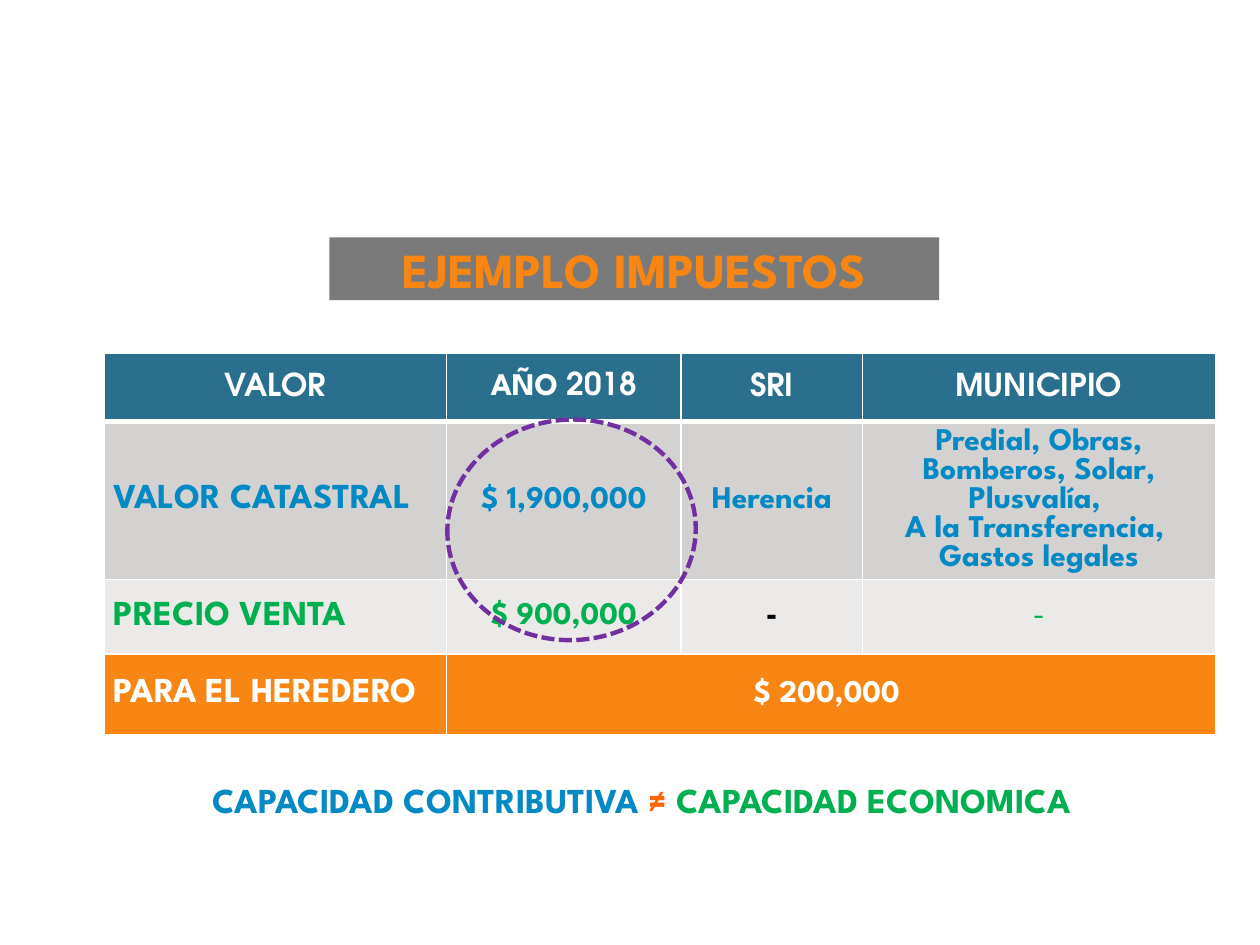
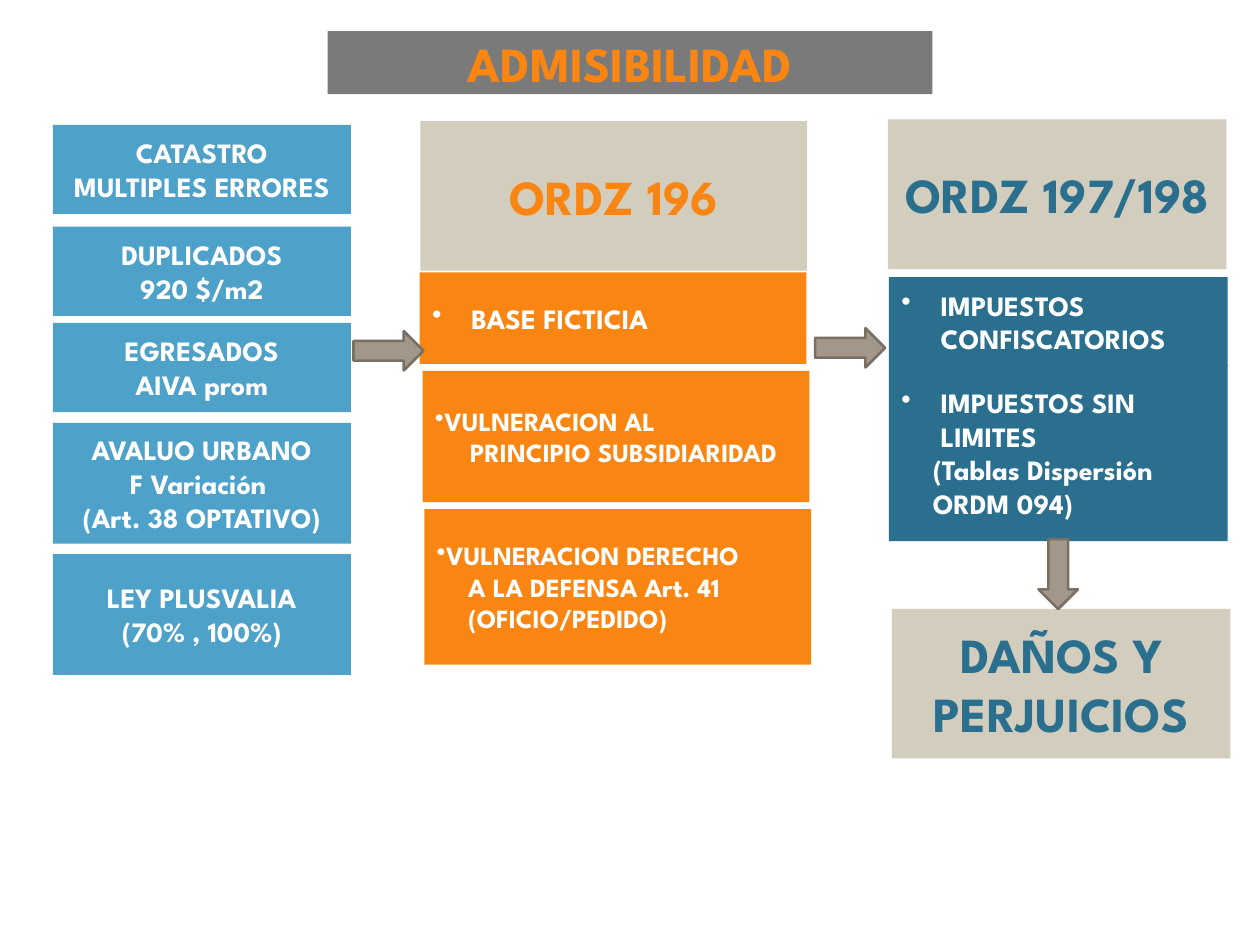
from pptx import Presentation
from pptx import util as u
from pptx.dml.color import RGBColor
from pptx.enum import dml, shapes, text
from pptx.oxml.ns import qn
from lxml import etree

Pt = u.Pt
WHITE = RGBColor(0xFF, 0xFF, 0xFF)
BLACK = RGBColor(0, 0, 0)
ORANGE = RGBColor(0xF9, 0x86, 0x13)
TEAL = RGBColor(0x2B, 0x6F, 0x8F)
SKY = RGBColor(0x4E, 0xA1, 0xC9)
BLUE = RGBColor(0x03, 0x89, 0xC4)
GREEN = RGBColor(0, 0xB0, 0x50)
RED_ORANGE = RGBColor(0xFF, 0x66, 0)
PURPLE = RGBColor(0x70, 0x30, 0xA0)
INK = RGBColor(0x0D, 0x0D, 0x0D)
SAND = RGBColor(0xAF, 0xA4, 0x89)
ARROW_FILL = RGBColor(0xA3, 0x97, 0x89)
ARROW_LINE = RGBColor(0x79, 0x70, 0x65)
GREY = RGBColor(0xD4, 0xD2, 0xD0)
PALE = RGBColor(0xEB, 0xEA, 0xE9)

SPARTAN = "League Spartan"
ADVENTOR = "TeX Gyre Adventor"
LEFT, CENTER = text.PP_ALIGN.LEFT, text.PP_ALIGN.CENTER
BULLET_INDENT = 22.5

TAX_COLUMNS = (195.5, 134.2, 103.6, 201.7)
TAX_ROWS = (
    (39, TEAL, WHITE, ("VALOR", "AÑO 2018", "SRI", "MUNICIPIO")),
    (90, GREY, BLUE, ("VALOR CATASTRAL", "$ 1,900,000", "Herencia",
                      "Predial, Obras,\nBomberos, Solar,\nPlusvalía, \n"
                      "A la Transferencia, \nGastos legales")),
    (42.5, PALE, GREEN, ("PRECIO VENTA", "$ 900,000", "-", "-")),
    (46.5, ORANGE, WHITE, ("PARA EL HEREDERO", "$ 200,000 ", "", "")),
)
CONCLUSION = (("CAPACIDAD CONTRIBUTIVA ", BLUE), ("≠ ", RED_ORANGE),
              ("CAPACIDAD ECONOMICA ", GREEN))

CAUSES = (
    (71.3, 51, ("CATASTRO", "MULTIPLES ERRORES")),
    (129.5, 51, ("DUPLICADOS", "920 $/m2")),
    (184.5, 51, ("EGRESADOS", "AIVA prom")),
    (241.7, 69, ("AVALUO URBANO", "F Variación ", "(Art. 38 OPTATIVO)")),
    (316.7, 69, ("LEY PLUSVALIA", "(70% , 100%)")),
)
HEADINGS = (
    ((240.3, 69.2, 221, 85.5), "ORDZ 196", ORANGE),
    ((507.4, 68.3, 193.5, 85.5), "ORDZ 197/198", TEAL),
    ((509.7, 347.9, 193.5, 85.5), "DAÑOS Y PERJUICIOS", TEAL),
)
HANGING = (BULLET_INDENT, -BULLET_INDENT)
FLUSH = (0, -BULLET_INDENT)
ARGUMENTS = (
    ((239.8, 155.6, 221, 52.4), ORANGE, 16, (("BASE FICTICIA", HANGING),)),
    ((241.5, 212, 221, 75), ORANGE, 15,
     (("VULNERACION AL", FLUSH), ("PRINCIPIO SUBSIDIARIDAD", (20, 0)))),
    ((242.5, 290.9, 221, 89), ORANGE, 15,
     (("VULNERACION DERECHO", FLUSH), ("A LA DEFENSA Art. 41", (18, 0)),
      ("(OFICIO/PEDIDO)", (18, 0)))),
    ((508, 158.4, 193.5, 51), TEAL, 16,
     (("IMPUESTOS CONFISCATORIOS", HANGING),)),
    ((508, 208.3, 193.5, 101), TEAL, 16,
     (("IMPUESTOS SIN LIMITES", HANGING), ("(Tablas Dispersión", (18, 0)),
      ("ORDM 094)", (18, 0)))),
)
ARROWS = ((202, 189.2, 0), (465.8, 187.5, 0), (584.7, 316.8, 90))


def add_figure(slide, kind, place, fill=None, alpha=None, line=None, width=1.5):
    figure = slide.shapes.add_shape(kind, *map(Pt, place))
    figure.shadow.inherit = False
    if fill is None:
        figure.fill.background()
    else:
        figure.fill.solid()
        figure.fill.fore_color.rgb = fill
    if alpha:
        color = figure.fill._xPr.find(qn("a:solidFill"))[0]
        etree.SubElement(color, qn("a:alpha"), val=str(alpha * 1000))
    if line is None:
        figure.line.fill.background()
    else:
        figure.line.color.rgb = line
        figure.line.width = Pt(width)
    return figure


def style(para, size, color, align=CENTER, font=SPARTAN, bold=True):
    para.alignment = align
    para.font.name = font
    para.font.size = Pt(size)
    para.font.bold = bold
    para.font.color.rgb = color


def write(frame, lines, size, color, align=CENTER):
    frame.word_wrap = True
    frame.vertical_anchor = text.MSO_ANCHOR.MIDDLE
    frame.text = "\n".join(lines)
    for para in frame.paragraphs:
        style(para, size, color, align)
    return frame.paragraphs


def indent(para, margin, first):
    properties = para._p.get_or_add_pPr()
    properties.set("marL", str(Pt(margin)))
    properties.set("indent", str(Pt(first)))
    if first:
        bullet = etree.Element(qn("a:buChar"), char="•")
        properties.find(qn("a:defRPr")).addprevious(bullet)


def add_box(slide, place, fill, lines, size, color=WHITE, align=CENTER, alpha=None):
    box = add_figure(slide, shapes.MSO_SHAPE.RECTANGLE, place, fill, alpha)
    return write(box.text_frame, lines, size, color, align)


def add_title(slide, place, title):
    add_box(slide, place, INK, [title], 28, ORANGE, alpha=55)


def border(cell, bottom):
    properties = cell._tc.get_or_add_tcPr()
    widths = {"lnL": 1, "lnR": 1, "lnT": 1, "lnB": bottom}
    for position, (tag, width) in enumerate(widths.items()):
        line = etree.Element(qn(f"a:{tag}"), w=str(Pt(width)))
        solid = etree.SubElement(line, qn("a:solidFill"))
        etree.SubElement(solid, qn("a:srgbClr"), val=str(WHITE))
        properties.insert(position, line)


def add_tax_table(slide):
    height = sum(row[0] for row in TAX_ROWS)
    table = slide.shapes.add_table(
        len(TAX_ROWS), len(TAX_COLUMNS), Pt(59.6), Pt(202),
        Pt(sum(TAX_COLUMNS)), Pt(height)).table
    table.horz_banding = False
    for column, width in zip(table.columns, TAX_COLUMNS):
        column.width = Pt(width)
    for r, (height, fill, color, labels) in enumerate(TAX_ROWS):
        table.rows[r].height = Pt(height)
        for c, label in enumerate(labels):
            cell = table.cell(r, c)
            cell.fill.solid()
            cell.fill.fore_color.rgb = fill
            cell.vertical_anchor = text.MSO_ANCHOR.MIDDLE
            cell.margin_left = cell.margin_right = Pt(5.4)
            cell.margin_top = cell.margin_bottom = Pt(3.6)
            border(cell, 1 if r else 3)
            cell.text = label
            row_label = r > 0 and c == 0
            for para in cell.text_frame.paragraphs:
                style(para, 20 if row_label else 18,
                      BLACK if (r, c) == (2, 2) else color,
                      LEFT if row_label else CENTER,
                      SPARTAN if r else ADVENTOR, (r, c) != (2, 3))
    year = table.cell(0, 1).text_frame.paragraphs[0]
    year.clear()
    for part, font in (("AÑO ", SPARTAN), ("2018", ADVENTOR)):
        span = year.add_run()
        span.text = part
        span.font.name = font
    table.cell(3, 1).merge(table.cell(3, 3))


def build_taxes(slide):
    add_tax_table(slide)
    add_title(slide, (188.2, 135.6, 348.5, 36), "EJEMPLO IMPUESTOS")
    ring = add_figure(slide, shapes.MSO_SHAPE.OVAL, (255.6, 239.8, 142, 126),
                      line=PURPLE, width=2.5)
    ring.rotation = 356.8
    ring.line.dash_style = dml.MSO_LINE.SQUARE_DOT
    box = slide.shapes.add_textbox(Pt(89.3), Pt(430.6), Pt(560), Pt(49))
    frame = box.text_frame
    frame.margin_left = frame.margin_right = 0
    frame.margin_top = frame.margin_bottom = Pt(9.4)
    para = write(frame, [""], 20, BLUE)[0]
    para.line_spacing = 1.14
    para.space_after = Pt(12)
    for part, color in CONCLUSION:
        span = para.add_run()
        span.text = part
        span.font.color.rgb = color


def build_admissibility(slide):
    add_title(slide, (187.2, 17.8, 345.6, 36), "ADMISIBILIDAD")
    for place, heading, color in HEADINGS:
        add_box(slide, place, SAND, [heading], 28, color, alpha=55)
    for top, height, lines in CAUSES:
        add_box(slide, (30.2, top, 170.3, height), SKY, lines, 16)
    for place, fill, size, entries in ARGUMENTS:
        lines = [line for line, _ in entries]
        paras = add_box(slide, place, fill, lines, size, align=LEFT)
        for para, (_, margins) in zip(paras, entries):
            indent(para, *margins)
    for left, top, turn in ARROWS:
        arrow = add_figure(slide, shapes.MSO_SHAPE.RIGHT_ARROW,
                           (left, top, 40, 22.5), ARROW_FILL, line=ARROW_LINE)
        arrow.rotation = turn


def main():
    deck = Presentation()
    deck.slide_width, deck.slide_height = Pt(720), Pt(540)
    for build in (build_taxes, build_admissibility):
        build(deck.slides.add_slide(deck.slide_layouts[6]))
    deck.save("out.pptx")


if __name__ == "__main__":
    main()
